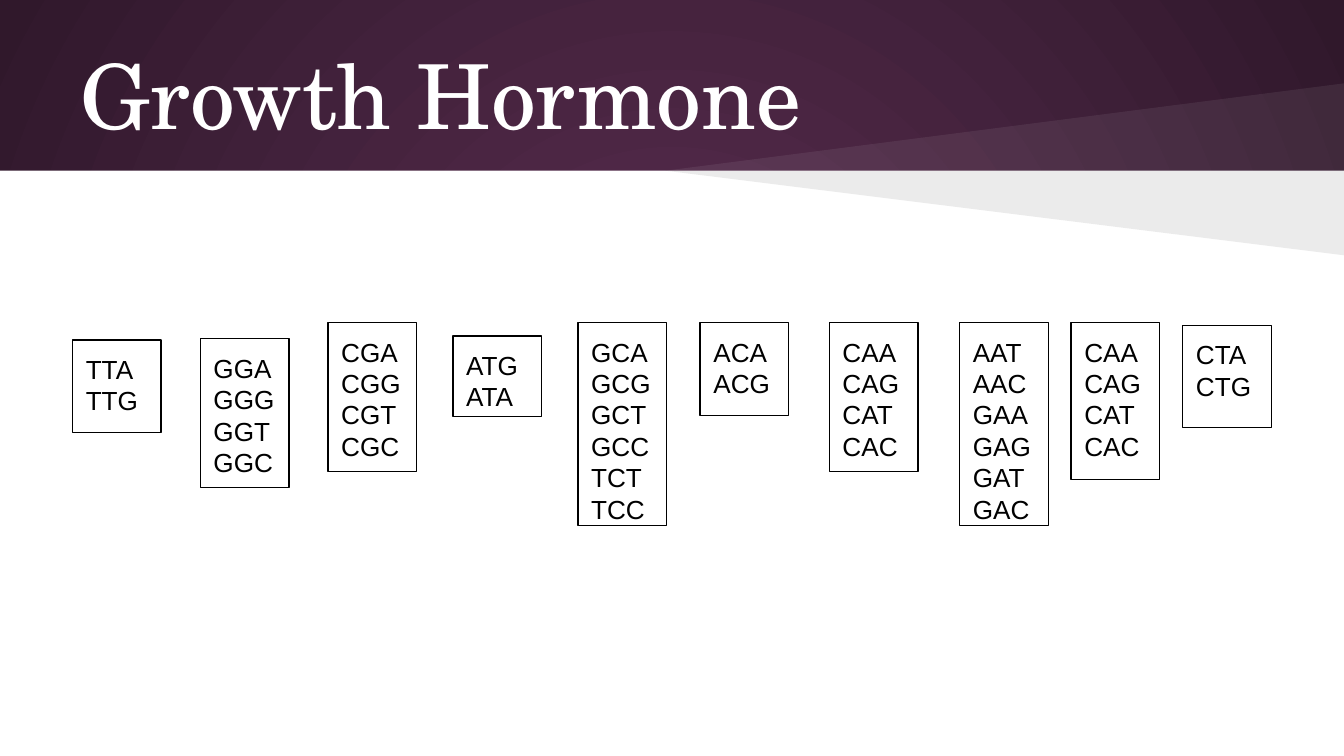
from dataclasses import dataclass

import lxml.etree
import pptx
import pptx.dml.color
import pptx.enum.shapes
import pptx.enum.text
import pptx.oxml.ns
import pptx.util

Inches = pptx.util.Inches
qn = pptx.oxml.ns.qn

COLORS = {"plum": "592D50", "dark_plum": "30182B", "white": "FFFFFF", "black": "000000"}
WIDTH = 10
HEIGHT = WIDTH * 9 / 16
BAND_BOTTOM = 1.27
WEDGE_TIP = 4.95
BOX_WIDTH = 0.66


@dataclass
class CodonBox:
    left: float
    top: float
    height: float
    paragraphs: tuple[str, ...]


@dataclass
class Wedge:
    outer_y: float
    color: str
    opacity: int


CODON_BOXES = [
    CodonBox(0.54, 2.53, 0.69, ("TTA TTG",)),
    CodonBox(1.49, 2.52, 1.11, ("GGA GGG GGT GGC",)),
    CodonBox(2.44, 2.4, 1.11, ("CGA CGG CGT CGC",)),
    CodonBox(3.37, 2.5, 0.6, ("ATG ATA",)),
    CodonBox(4.3, 2.4, 1.51, ("GCA GCG GCT GCC TCT", "TCC")),
    CodonBox(5.21, 2.4, 0.69, ("ACA ACG",)),
    CodonBox(6.17, 2.4, 1.11, ("CAA CAG CAT CAC",)),
    CodonBox(7.14, 2.4, 1.51, ("AAT AAC GAA GAG", "GAT", "GAC")),
    CodonBox(7.97, 2.4, 1.17, ("CAA CAG CAT CAC",)),
    CodonBox(8.8, 2.42, 0.76, ("CTA CTG",)),
]
WEDGES = [Wedge(0.62, "white", 7), Wedge(1.9, "black", 8)]


def rgb(name: str) -> pptx.dml.color.RGBColor:
    return pptx.dml.color.RGBColor.from_string(COLORS[name])


def paint_background(slide) -> None:
    """Fill the background with a radial gradient, light at the centre."""
    fill = slide.background.fill
    fill.gradient()
    for stop, position, color in zip(fill.gradient_stops, (0, 1), ("plum", "dark_plum")):
        stop.position = position
        stop.color.rgb = rgb(color)
    gradient = next(slide.element.iter(qn("a:gradFill")))
    gradient.remove(gradient.find(qn("a:lin")))
    circle = lxml.etree.SubElement(gradient, qn("a:path"), {"path": "circle"})
    center = dict.fromkeys("ltrb", "50000")
    lxml.etree.SubElement(circle, qn("a:fillToRect"), center)


def add_rectangle(slide, left: float, top: float, width: float, height: float):
    shape = slide.shapes.add_shape(
        pptx.enum.shapes.MSO_SHAPE.RECTANGLE,
        Inches(left), Inches(top), Inches(width), Inches(height))
    shape.shadow.inherit = False
    return shape


def add_wedge(slide, wedge: Wedge) -> None:
    builder = slide.shapes.build_freeform(
        Inches(WIDTH), Inches(BAND_BOTTOM), scale=1.0)
    builder.add_line_segments(
        [(Inches(WEDGE_TIP), Inches(BAND_BOTTOM)), (Inches(WIDTH), Inches(wedge.outer_y))])
    shape = builder.convert_to_shape()
    shape.shadow.inherit = False
    shape.line.fill.background()
    shape.fill.solid()
    shape.fill.fore_color.rgb = rgb(wedge.color)
    color = shape.element.spPr.find(qn("a:solidFill"))[0]
    lxml.etree.SubElement(color, qn("a:alpha"), val=str(wedge.opacity * 1000))


def format_text(text_frame, font_name: str, size: int, color: str) -> None:
    text_frame.margin_left = text_frame.margin_right = Inches(0.1)
    text_frame.margin_top = text_frame.margin_bottom = Inches(0.1)
    text_frame.word_wrap = True
    for paragraph in text_frame.paragraphs:
        paragraph.alignment = pptx.enum.text.PP_ALIGN.LEFT
        for run in paragraph.runs:
            run.font.name = font_name
            run.font.size = pptx.util.Pt(size)
            run.font.color.rgb = rgb(color)


def add_codon_box(slide, box: CodonBox) -> None:
    shape = add_rectangle(slide, box.left, box.top, BOX_WIDTH, box.height)
    shape.fill.background()
    shape.line.color.rgb = rgb("black")
    shape.line.width = pptx.util.Pt(0.75)
    text_frame = shape.text_frame
    text_frame.text = "\n".join(box.paragraphs).replace(" ", "\v")
    text_frame.vertical_anchor = pptx.enum.text.MSO_ANCHOR.TOP
    format_text(text_frame, "Arial", 14, "black")
    for line_break in shape.element.iter(qn("a:br")):
        lxml.etree.SubElement(line_break, qn("a:rPr"), sz="1400")


def place_title(slide, text: str) -> None:
    title = slide.shapes.title
    title.left, title.top = Inches(0.5), Inches(0.23)
    title.width, title.height = Inches(9), Inches(0.94)
    title.text_frame.text = text
    title.text_frame.vertical_anchor = pptx.enum.text.MSO_ANCHOR.MIDDLE
    format_text(title.text_frame, "TeX Gyre Schola", 48, "white")
    # Bring the title in front of the backdrop
    title.element.getparent().append(title.element)


def main() -> None:
    presentation = pptx.Presentation()
    presentation.slide_width = Inches(WIDTH)
    presentation.slide_height = Inches(HEIGHT)
    slide = presentation.slides.add_slide(presentation.slide_layouts.get_by_name("Title Only"))

    paint_background(slide)
    panel = add_rectangle(slide, 0, BAND_BOTTOM, WIDTH, HEIGHT - BAND_BOTTOM)
    panel.fill.solid()
    panel.fill.fore_color.rgb = rgb("white")
    panel.line.fill.background()
    for wedge in WEDGES:
        add_wedge(slide, wedge)
    place_title(slide, "Growth Hormone")
    for box in CODON_BOXES:
        add_codon_box(slide, box)

    presentation.save("out.pptx")


if __name__ == "__main__":
    main()
